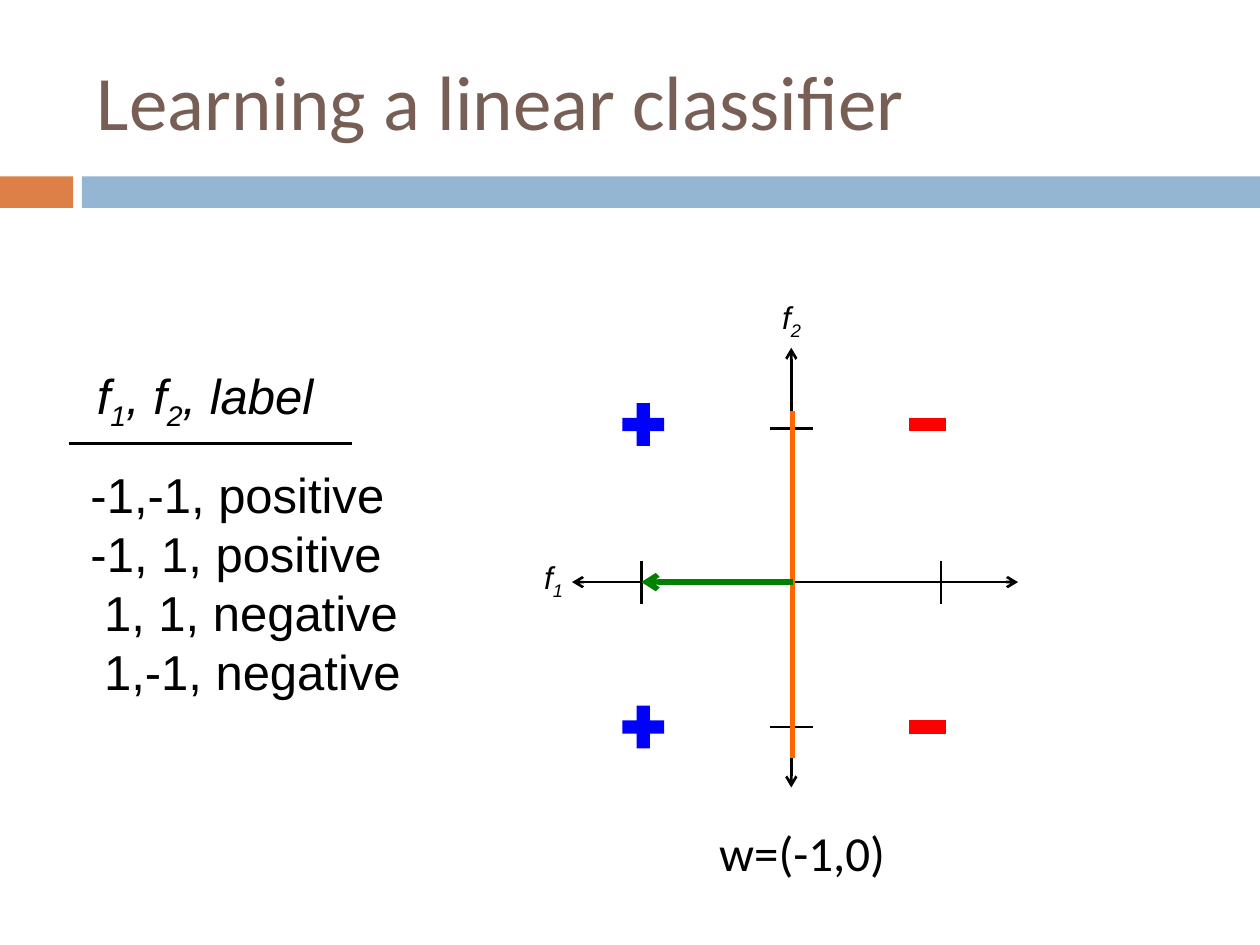
from itertools import product

from lxml.etree import SubElement
from pptx import Presentation
from pptx.dml.color import RGBColor
from pptx.enum.shapes import MSO_CONNECTOR as Connector, MSO_SHAPE as Shape
from pptx.enum.text import MSO_ANCHOR as Anchor, MSO_AUTO_SIZE as AutoSize
from pptx.oxml.ns import qn
from pptx.util import Inches, Pt

COLORS = {
    "title": "775F55",
    "accent": "DD8047",
    "band": "94B6D2",
    "ink": "000000",
    "positive": "0000FF",
    "negative": "FF0000",
    "boundary": "FF6600",
    "weight": "008000",
}

# The slide is a grid of 100 columns by 75 rows of square cells
COLUMNS, ROWS = 100, 75
CELL = Inches(0.1)

ORIGIN_X, ORIGIN_Y = 62.8, 46.2
LEFT_TICK, RIGHT_TICK = 50.9, 74.7
UPPER_TICK, LOWER_TICK = 34, 57.7
HALF_TICK = 1.7


def grid(*cells):
    return [round(cell * CELL) for cell in cells]


def color(name):
    return RGBColor.from_string(COLORS[name])


def add_block(slide, kind, box, fill):
    shape = slide.shapes.add_shape(kind, *grid(*box))
    shape.shadow.inherit = False
    shape.fill.solid()
    shape.fill.fore_color.rgb = color(fill)
    shape.line.fill.background()


def add_line(slide, start, end, name="ink", width=1.5, arrows=()):
    """Draw a line; arrows may hold headEnd (start) and tailEnd (end)."""
    line = slide.shapes.add_connector(Connector.STRAIGHT, *grid(*start, *end))
    line.line.color.rgb = color(name)
    line.line.width = Pt(width)
    outline = line.line._get_or_add_ln()
    for arrow in arrows:
        SubElement(outline, qn(f"a:{arrow}"), type="arrow")
    SubElement(line._element.spPr, qn("a:effectLst"))


def add_text(slide, box, lines, size, font="Arial", name="ink", italic=False,
             wrap=False, anchor=Anchor.TOP):
    """Write lines of text; an underscore puts the next character in subscript."""
    frame = slide.shapes.add_textbox(*grid(*box)).text_frame
    frame.word_wrap = wrap
    frame.auto_size = AutoSize.NONE if wrap else AutoSize.SHAPE_TO_FIT_TEXT
    frame.vertical_anchor = anchor
    for index, line in enumerate(lines):
        paragraph = frame.paragraphs[0] if index == 0 else frame.add_paragraph()
        first, *others = line.split("_")
        pieces = [(first, False)]
        for other in others:
            pieces += [(other[0], True), (other[1:], False)]
        for text, subscript in pieces:
            if not text:
                continue
            run = paragraph.add_run()
            run.text = text
            run.font.name = font
            run.font.size = Pt(size)
            run.font.italic = italic
            run.font.color.rgb = color(name)
            if subscript:
                run._r.get_or_add_rPr().set("baseline", "-25000")


def add_header(slide):
    add_block(slide, Shape.RECTANGLE, (0, 14, 5.8, 2.5), "accent")
    add_block(slide, Shape.RECTANGLE, (6.5, 14, COLUMNS - 6.5, 2.5), "band")
    add_text(slide, (6.7, 2.5, 89.2, 10.8), ["Learning a linear classifier"], 44,
             font="Calibri", name="title", wrap=True, anchor=Anchor.MIDDLE)


def add_axes(slide):
    both = ("headEnd", "tailEnd")
    add_line(slide, (ORIGIN_X, 62.5), (ORIGIN_X, 27.6), arrows=both)
    add_line(slide, (45.4, ORIGIN_Y), (80.8, ORIGIN_Y), arrows=both)
    for y in (UPPER_TICK, LOWER_TICK):
        add_line(slide, (ORIGIN_X - HALF_TICK, y), (ORIGIN_X + HALF_TICK, y))
    for x in (RIGHT_TICK, LEFT_TICK):
        add_line(slide, (x, ORIGIN_Y - HALF_TICK), (x, ORIGIN_Y + HALF_TICK))
    add_text(slide, (42.2, 43.8, 4.1, 4), ["f_1"], 18, italic=True)
    add_text(slide, (61.1, 23.2, 4.1, 4), ["f_2"], 18, italic=True)


def add_examples(slide):
    marks = (
        (Shape.MATH_PLUS, 48.8, 4.5, "positive"),
        (Shape.MATH_MINUS, 71.6, 4, "negative"),
    )
    for (kind, left, width, fill), top in product(marks, (31.4, 55.4)):
        add_block(slide, kind, (left, top, width, 4.6), fill)


def add_data_list(slide):
    add_text(slide, (6.7, 28.5, 20.6, 8.9), ["f_1, f_2, label"], 28, italic=True)
    add_line(slide, (5.5, 35.2), (27.9, 35.2))
    rows = ["-1,-1, positive", "-1, 1, positive", " 1, 1, negative", " 1,-1, negative"]
    add_text(slide, (6.2, 36.4, 26.7, 19.9), rows, 28)


def add_classifier(slide):
    x = ORIGIN_X + 0.1
    add_line(slide, (x, 60.2), (x, 32.6), "boundary", 3)
    add_line(slide, (x, ORIGIN_Y), (LEFT_TICK, ORIGIN_Y), "weight", 3, ("tailEnd",))
    add_text(slide, (56.1, 64.8, 15.9, 5.7), ["w=(-1,0)"], 28, font="Calibri")


def main():
    presentation = Presentation()
    presentation.slide_width, presentation.slide_height = grid(COLUMNS, ROWS)
    slide = presentation.slides.add_slide(presentation.slide_layouts[6])
    add_header(slide)
    add_axes(slide)
    add_examples(slide)
    add_data_list(slide)
    add_classifier(slide)
    presentation.save("out.pptx")


if __name__ == "__main__":
    main()
